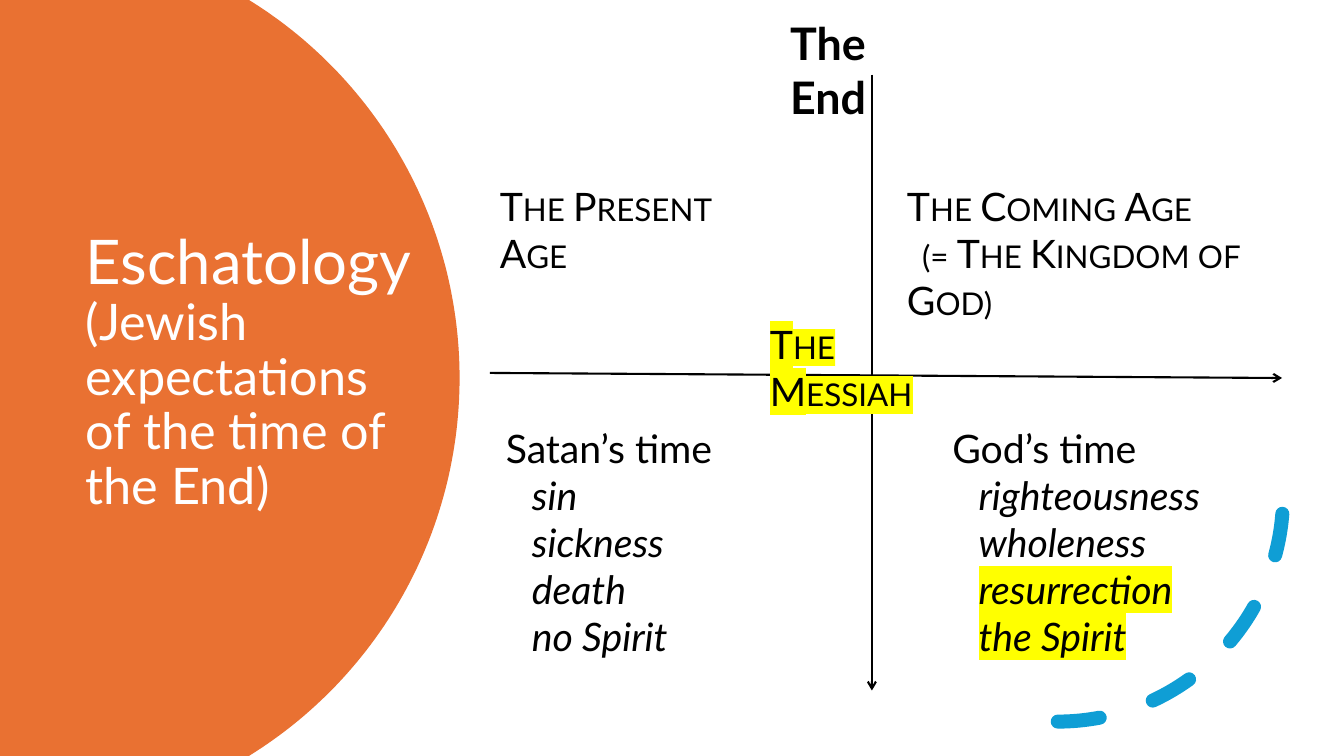
from math import asin, cos, sin

from lxml.etree import SubElement
from pptx import Presentation
from pptx.dml.color import RGBColor
from pptx.enum.dml import MSO_LINE
from pptx.enum.shapes import MSO_CONNECTOR, MSO_SHAPE
from pptx.enum.text import MSO_ANCHOR, MSO_AUTO_SIZE, PP_ALIGN
from pptx.oxml.ns import qn
from pptx.util import Pt

COLORS = {"panel": "E97132", "arc": "0F9ED5", "text": "000000",
          "title": "FFFFFF", "highlight": "FFFF00"}
FONT = "Lato"
SLIDE_BOX = (0, 0, 960, 540)
PANEL_BOX = (0, 0, 328.3, 540)
DIAGRAM_BOX = (350, 8, 600, 508)


def color(name):
    return RGBColor.from_string(COLORS[name])


def add_run(paragraph, text, size=28, color_name="text", bold=False,
            italic=False, small_caps=False, highlight=False):
    run = paragraph.add_run()
    run.text = text
    font = run.font
    font.size, font.bold, font.italic = Pt(size), bold, italic
    font.color.rgb = color(color_name)
    properties = run._r.get_or_add_rPr()
    if small_caps:
        properties.set("cap", "small")
    if highlight:
        marker = SubElement(properties, qn("a:highlight"))
        SubElement(marker, qn("a:srgbClr"), val=COLORS["highlight"])
    font.name = FONT


def add_text_box(slide, left, top, width, height):
    shape = slide.shapes.add_textbox(Pt(left), Pt(top), Pt(width), Pt(height))
    frame = shape.text_frame
    frame.word_wrap = True
    frame.auto_size = MSO_AUTO_SIZE.SHAPE_TO_FIT_TEXT
    return frame


def add_label(slide, left, top, width, text, **style):
    frame = add_text_box(slide, left, top, width, 41)
    add_run(frame.paragraphs[0], text, **style)
    return frame


def add_indented(frame, left_margin, first_line):
    paragraph = frame.add_paragraph()
    properties = paragraph._p.get_or_add_pPr()
    properties.set("marL", str(Pt(left_margin)))
    properties.set("indent", str(Pt(first_line)))
    return paragraph


def add_age_list(slide, left, top, width, heading, items, highlighted=()):
    frame = add_text_box(slide, left, top, width, 177)
    add_run(frame.paragraphs[0], heading)
    for item in items:
        add_run(add_indented(frame, 0, 18.7), item, italic=True,
                highlight=item in highlighted)


def add_arrow(slide, start, end):
    arrow = slide.shapes.add_connector(
        MSO_CONNECTOR.STRAIGHT, *(Pt(value) for value in (*start, *end)))
    arrow.line.color.rgb = color("text")
    arrow.line.width = Pt(1.5)
    SubElement(arrow.line._get_or_add_ln(), qn("a:tailEnd"), type="arrow")
    SubElement(arrow._element.spPr, qn("a:effectLst"))


def add_title_panel(slide, box):
    left, top, width, height = box
    radius = 317.5
    center_x, center_y = left + width - radius, top + height / 2
    limit = asin(height / 2 / radius)
    steps = 120
    angles = [limit * (2 * step / steps - 1) for step in range(steps + 1)]
    edge = [(Pt(center_x + radius * cos(angle)), Pt(center_y + radius * sin(angle)))
            for angle in angles]
    builder = slide.shapes.build_freeform(Pt(left), Pt(top))
    builder.add_line_segments([*edge, (Pt(left), Pt(top + height))])
    panel = builder.convert_to_shape()
    panel.shadow.inherit = False
    panel.fill.solid()
    panel.fill.fore_color.rgb = color("panel")
    panel.line.fill.background()

    title = slide.shapes.title
    title.left, title.top = Pt(left + 54), Pt(top + 90.7)
    title.width, title.height = Pt(252), Pt(351.4)
    slide.shapes._spTree.append(title._element)
    frame = title.text_frame
    frame.word_wrap = True
    frame.auto_size = MSO_AUTO_SIZE.NONE
    frame.vertical_anchor = MSO_ANCHOR.MIDDLE
    paragraph = frame.paragraphs[0]
    paragraph.alignment = PP_ALIGN.LEFT
    paragraph.line_spacing = 0.9
    add_run(paragraph, "Eschatology", 44, "title")
    paragraph.add_line_break()
    add_run(paragraph, "(Jewish expectations of the time of the End)", 36, "title")


def add_corner_arc(slide, box):
    left, top, width, height = box
    size = 321.8
    arc = slide.shapes.add_shape(
        MSO_SHAPE.ARC, Pt(left + width - 43.5 - size),
        Pt(top + height - 24.5 - size), Pt(size), Pt(size))
    arc.shadow.inherit = False
    arc.fill.background()
    arc.line.color.rgb = color("arc")
    arc.line.width = Pt(10)
    arc.line.dash_style = MSO_LINE.DASH
    arc.line._get_or_add_ln().set("cap", "rnd")
    arc._element.spPr.find(qn("a:xfrm")).set("flipV", "1")


def add_ages_diagram(slide, box):
    left, top, width, height = box
    axis_x = left + 272.8
    labels_y, lists_y = top + 118.7, top + 291.5
    add_arrow(slide, (left, top + 258.4), (left + 565.8, top + 262))
    add_arrow(slide, (axis_x, top + 45.3), (axis_x, top + 485.2))
    add_label(slide, left + 207.3, top, 122, "The End", size=32, bold=True)
    add_label(slide, left, labels_y, 208.8, "The Present Age", small_caps=True)
    coming = add_label(slide, left + 290.8, labels_y, 305.3,
                       "The Coming Age", small_caps=True)
    add_run(add_indented(coming, 0, 10.8), "(= The Kingdom of God)", small_caps=True)
    add_age_list(slide, left + 4.2, lists_y, 164.2, "Satan’s time",
                 ["sin", "sickness", "death", "no Spirit"])
    add_age_list(slide, left + 323.2, lists_y, 213.1, "God’s time",
                 ["righteousness", "wholeness", "resurrection", "the Spirit"],
                 ["resurrection", "the Spirit"])
    add_label(slide, left + 192.9, top + 217.4, 158.4, "The Messiah",
              small_caps=True, highlight=True)


def main():
    presentation = Presentation()
    presentation.slide_width, presentation.slide_height = Pt(960), Pt(540)
    slide = presentation.slides.add_slide(presentation.slide_layouts[5])
    add_title_panel(slide, PANEL_BOX)
    add_corner_arc(slide, SLIDE_BOX)
    add_ages_diagram(slide, DIAGRAM_BOX)
    presentation.save("out.pptx")


if __name__ == "__main__":
    main()
